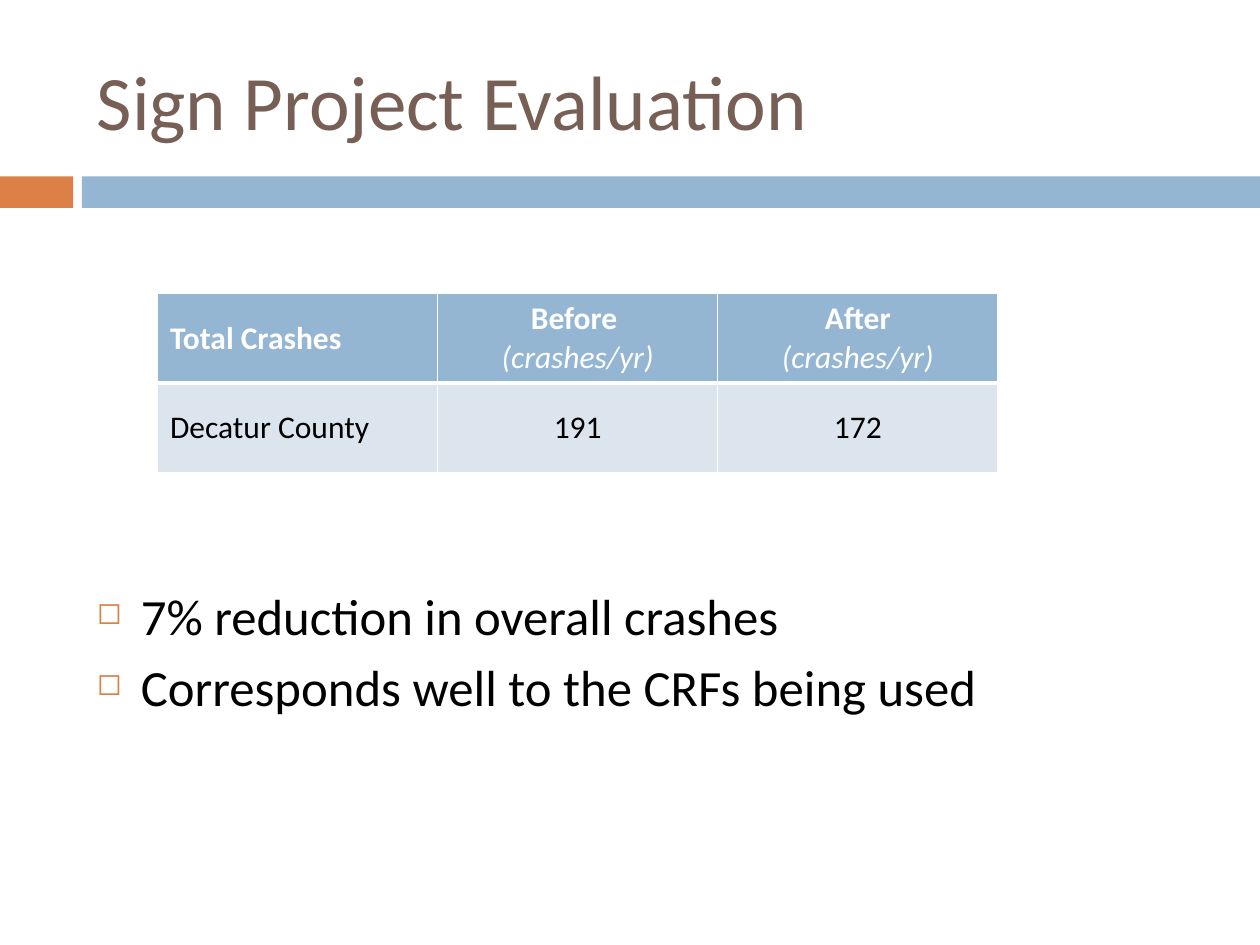
from dataclasses import dataclass

from lxml.etree import SubElement
from pptx import Presentation
from pptx.dml.color import RGBColor as RGB
from pptx.enum.shapes import MSO_SHAPE as SHAPE
from pptx.enum.text import MSO_ANCHOR as ANCHOR, PP_ALIGN as ALIGN
from pptx.oxml.ns import qn
from pptx.util import Inches, Pt


@dataclass(frozen=True)
class Theme:
    font: str = "Calibri"
    title: str = "775F55"
    accent: str = "DD8047"
    band: str = "94B6D2"
    row: str = "DCE5EE"
    light: str = "FFFFFF"
    dark: str = "000000"
    title_size: int = 44
    body_size: int = 29
    table_size: int = 18


class Deck:
    def __init__(self, prs, theme):
        self.theme = theme
        self.s = prs.slides.add_slide(prs.slide_layouts[6])

    def add_text(self, p, text, size, color, **fmt):
        r = p.add_run()
        r.text = text
        r.font.color.rgb = RGB.from_string(color)
        for name, value in {"name": self.theme.font, "size": Pt(size), **fmt}.items():
            setattr(r.font, name, value)

    def bar(self, *box, color):
        sp = self.s.shapes.add_shape(SHAPE.RECTANGLE, *map(Inches, box))
        sp.shadow.inherit = False
        sp.fill.solid()
        sp.fill.fore_color.rgb = RGB.from_string(color)
        sp.line.fill.background()

    def text_frame(self, *box, anchor):
        tf = self.s.shapes.add_textbox(*map(Inches, box)).text_frame
        for name, value in {"word_wrap": True, "vertical_anchor": anchor}.items():
            setattr(tf, name, value)
        return tf

    def title(self, text, *box):
        tf = self.text_frame(*box, anchor=ANCHOR.MIDDLE)
        self.add_text(tf.paragraphs[0], text, self.theme.title_size, self.theme.title)

    def bullets(self, items, *box):
        tf = self.text_frame(*box, anchor=ANCHOR.TOP)
        for i, text in enumerate(items):
            p = tf.add_paragraph() if i else tf.paragraphs[0]
            p.space_before = Pt(5.6)
            self.add_text(p, text, self.theme.body_size, self.theme.dark)
            pPr = p._p.get_or_add_pPr()
            pPr.set("marL", str(Inches(0.35)))
            pPr.set("indent", str(-Inches(0.35)))
            clr = SubElement(pPr, qn("a:buClr"))
            SubElement(clr, qn("a:srgbClr"), val=self.theme.accent)
            SubElement(pPr, qn("a:buSzPct"), val="60000")
            SubElement(pPr, qn("a:buChar"), char="◻")

    def borders(self, cell, **widths):
        tcPr = cell._tc.get_or_add_tcPr()
        for i, side in enumerate(("lnL", "lnR", "lnT", "lnB")):
            ln = SubElement(tcPr, qn(f"a:{side}"), w=str(Pt(widths.get(side, 1))))
            fill = SubElement(ln, qn("a:solidFill"))
            SubElement(fill, qn("a:srgbClr"), val=self.theme.light)
            tcPr.insert(i, ln)

    def table(self, rows, *box):
        t = self.theme
        table = self.s.shapes.add_table(len(rows), len(rows[0]), *map(Inches, box)).table
        for i, row in enumerate(rows):
            head = i == 0
            edge = {"lnB": 3} if head else {"lnT": 3}
            for j, lines in enumerate(row):
                cell = table.cell(i, j)
                cell.vertical_anchor = ANCHOR.MIDDLE
                cell.fill.solid()
                cell.fill.fore_color.rgb = RGB.from_string(t.band if head else t.row)
                self.borders(cell, **edge)
                tf = cell.text_frame
                for k, text in enumerate(lines):
                    p = tf.add_paragraph() if k else tf.paragraphs[0]
                    p.alignment = ALIGN.CENTER if j else ALIGN.LEFT
                    self.add_text(p, text, t.table_size, t.light if head else t.dark,
                                  bold=head and k == 0, italic=k > 0)


def main():
    prs = Presentation()
    prs.slide_width, prs.slide_height = Inches(10), Inches(7.5)
    theme = Theme()
    deck = Deck(prs, theme)
    deck.bar(0, 1.4, 0.58, 0.25, color=theme.accent)
    deck.bar(0.65, 1.4, 9.35, 0.25, color=theme.band)
    deck.title("Sign Project Evaluation", 0.67, 0.25, 8.92, 1.08)
    deck.bullets(["7% reduction in overall crashes",
                  "Corresponds well to the CRFs being used"], 0.67, 4.59, 9, 2.15)
    unit = "(crashes/yr)"
    deck.table([[["Total Crashes"], ["Before ", unit], ["After", unit]],
                [["Decatur County"], ["191"], ["172"]]], 1.25, 2.33, 6.67, 1.42)
    prs.save("out.pptx")


if __name__ == "__main__":
    main()
